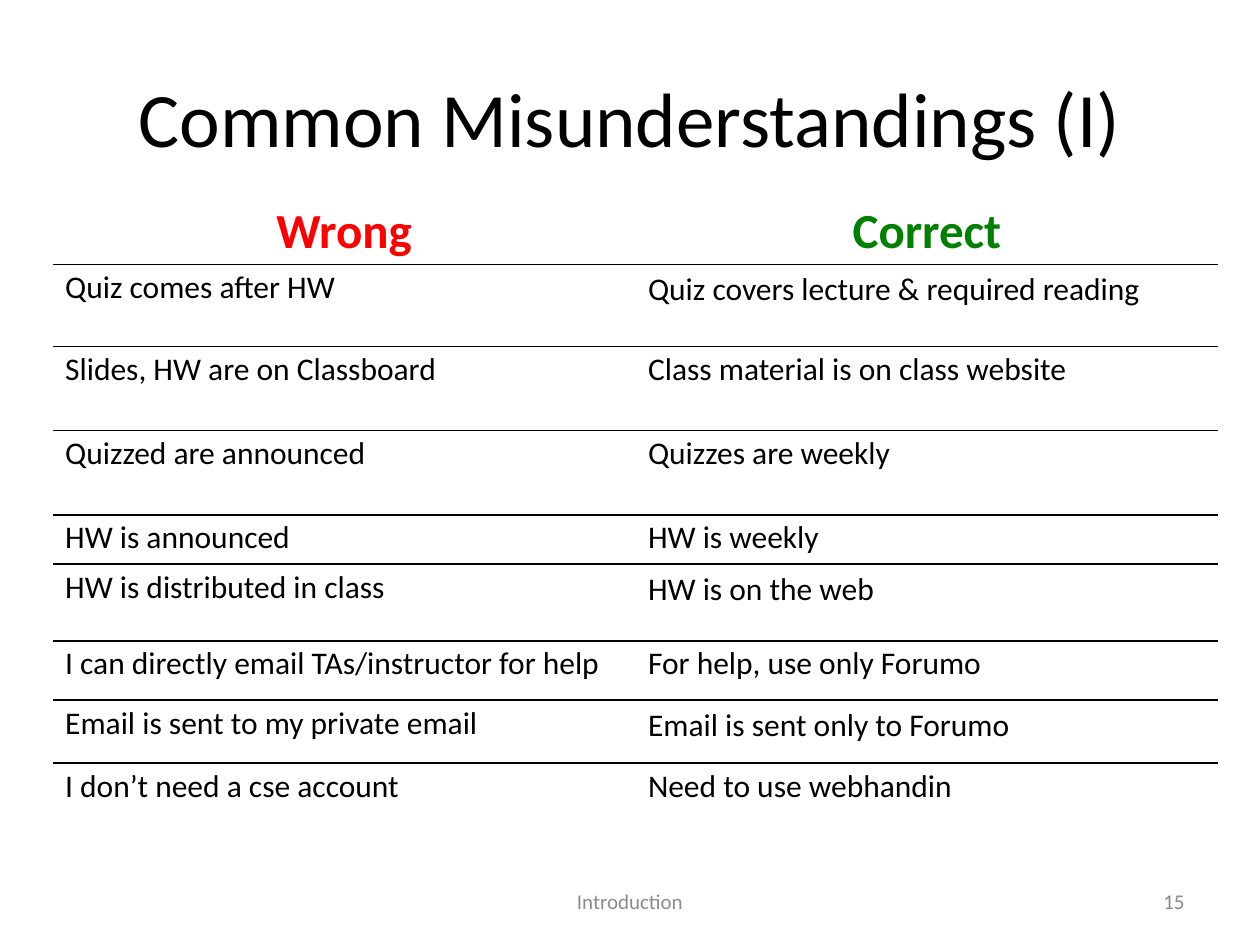
import pptx
import pptx.dml.color
import pptx.enum.text
import pptx.oxml
import pptx.oxml.ns
import pptx.util

Cm = pptx.util.Cm
Pt = pptx.util.Pt
Align = pptx.enum.text.PP_ALIGN
Anchor = pptx.enum.text.MSO_ANCHOR

COLORS = {
    "text": "000000",
    "rule": "000000",
    "wrong": "FF0000",
    "correct": "008000",
    "number": "898989",
    "footer": "8C8C8C",
}
TIGHT = 0.9
HEADINGS = [("Wrong", "wrong"), ("Correct", "correct")]
HEADING_HEIGHT = 1.32
ROWS = [
    (1.65, "Quiz comes after HW", "Quiz covers lecture & required reading", 1),
    (1.7, "Slides, HW are on Classboard", "Class material is on class website", TIGHT),
    (1.7, "Quizzed are announced", "Quizzes are weekly", TIGHT),
    (0.99, "HW is announced", "HW is weekly", TIGHT),
    (1.55, "HW is distributed in class", "HW is on the web", 1),
    (1.19, "I can directly email TAs/instructor for help", "For help, use only Forumo", TIGHT),
    (1.27, "Email is sent to my private email", "Email is sent only to Forumo", 1),
    (1.27, "I don’t need a cse account", "Need to use webhandin", TIGHT),
]


class SlideBuilder:
    font = "Calibri"

    def __init__(self, deck):
        self.page = deck.slides.add_slide(deck.slide_layouts[6])

    def paragraph(self, frame, text, size, color, align, bold=False, spacing=1):
        para = frame.paragraphs[0]
        para.text = text
        para.alignment = align
        para.line_spacing = float(spacing)
        para.font.name = self.font
        para.font.size = Pt(size)
        para.font.bold = bold
        para.font.color.rgb = pptx.dml.color.RGBColor.from_string(COLORS[color])

    def text(self, left, top, width, height, text, size, color, align):
        box = self.page.shapes.add_textbox(Cm(left), Cm(top), Cm(width), Cm(height))
        box.text_frame.word_wrap = True
        box.text_frame.vertical_anchor = Anchor.MIDDLE
        self.paragraph(box.text_frame, text, size, color, align)

    def borders(self, cell, ruled):
        properties = cell._tc.get_or_add_tcPr()
        for index, side in enumerate(("lnL", "lnR", "lnT", "lnB")):
            if side in ruled:
                fill = f'<a:solidFill><a:srgbClr val="{COLORS["rule"]}"/></a:solidFill>'
            else:
                fill = "<a:noFill/>"
            line = f'<a:{side} {pptx.oxml.ns.nsdecls("a")} w="{Pt(1)}">{fill}</a:{side}>'
            properties.insert(index, pptx.oxml.parse_xml(line))

    def table(self, left, top, column_width, headings, heading_height, rows):
        heights = [heading_height] + [row[0] for row in rows]
        frame = self.page.shapes.add_table(
            len(heights), len(headings), Cm(left), Cm(top),
            Cm(column_width * len(headings)), Cm(sum(heights)),
        )
        table = frame.table
        table.first_row = False
        table.horz_banding = False
        for column in table.columns:
            column.width = Cm(column_width)
        for row, height in zip(table.rows, heights):
            row.height = Cm(height)
        for column, (heading, color) in enumerate(headings):
            self.paragraph(table.cell(0, column).text_frame, heading, 28, color,
                           Align.CENTER, True, TIGHT)
        for number, (_, wrong, correct, spacing) in enumerate(rows, 1):
            for column, (text, gap) in enumerate([(wrong, TIGHT), (correct, spacing)]):
                self.paragraph(table.cell(number, column).text_frame, text, 18, "text",
                               Align.LEFT, spacing=gap)
        last = len(heights) - 1
        for number in range(len(heights)):
            ruled = [side for side, shown in (("lnT", number > 0), ("lnB", number < last)) if shown]
            for column in range(len(headings)):
                cell = table.cell(number, column)
                cell.fill.background()
                self.borders(cell, ruled)


def main():
    deck = pptx.Presentation()
    deck.slide_width = Cm(25.4)
    deck.slide_height = Cm(19.05)
    slide = SlideBuilder(deck)
    slide.text(1.27, 0.76, 22.86, 3.18, "Common Misunderstandings (I)", 44, "text", Align.CENTER)
    slide.table(1.06, 4.01, 11.75, HEADINGS, HEADING_HEIGHT, ROWS)
    slide.text(18.2, 17.66, 5.93, 1.01, "15", 12, "number", Align.RIGHT)
    slide.text(8.68, 17.66, 8.04, 1.01, "Introduction", 12, "footer", Align.CENTER)
    deck.save("out.pptx")


if __name__ == "__main__":
    main()
